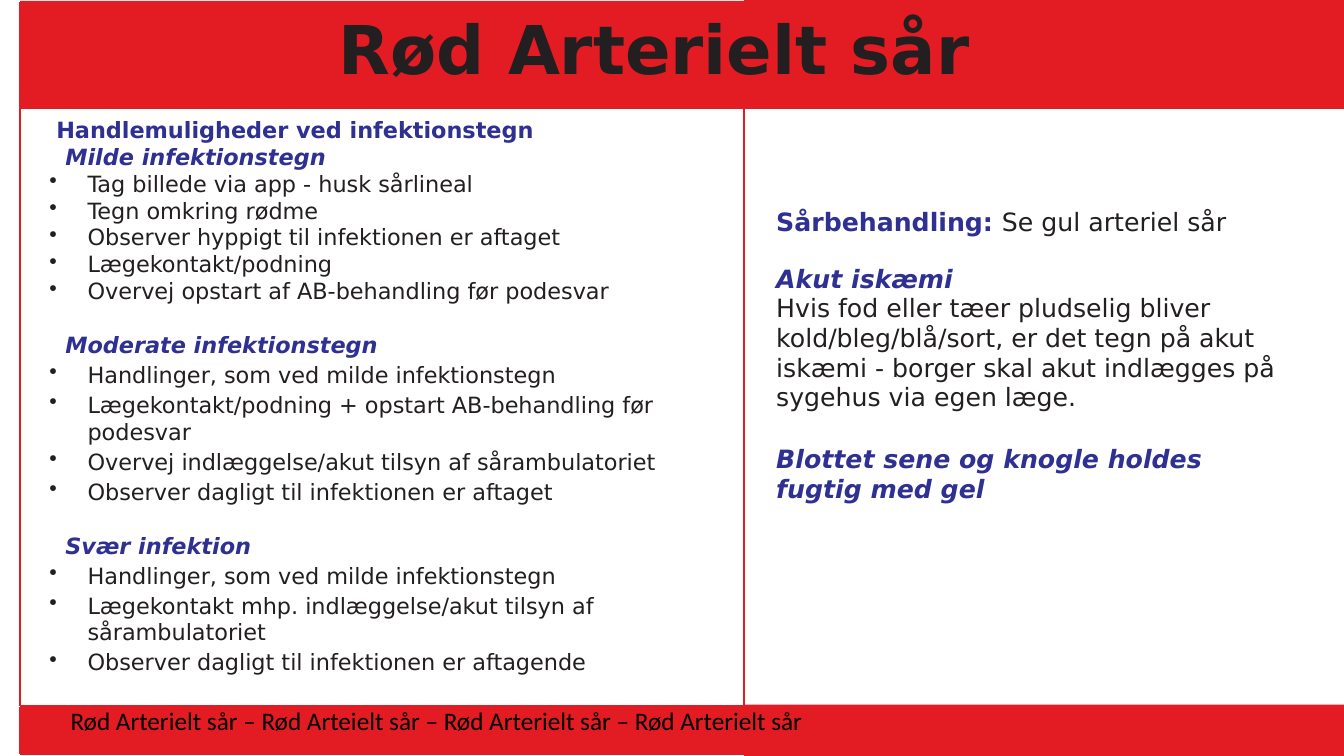
from lxml import etree
from pptx import Presentation
from pptx.dml.color import RGBColor
from pptx.enum.shapes import MSO_CONNECTOR as Connector, MSO_SHAPE as Shape
from pptx.enum.text import MSO_ANCHOR as Anchor, MSO_AUTO_SIZE as AutoSize, PP_ALIGN as Align
from pptx.oxml.ns import qn
from pptx.util import Inches, Pt

RED, BLUE, INK, BLACK = "E31B22", "2E3092", "231F20", "000000"
LEFT, MIDDLE, RIGHT = 0.2, 7.38, 13.33


def color(value):
    return RGBColor.from_string(value)


def write(para, text, size=16, font="DejaVu Sans", fill=INK, bold=False, italic=False):
    span = para.add_run()
    span.text = text
    span.font.size = Pt(size)
    span.font.name = font
    span.font.color.rgb = color(fill)
    span.font.bold = bold
    span.font.italic = italic


class Board:
    def __init__(self, slide, accent):
        self.slide = slide
        self.accent = accent

    def band(self, left, top, width, height):
        shape = self.slide.shapes.add_shape(
            Shape.RECTANGLE, Inches(left), Inches(top), Inches(width), Inches(height))
        shape.shadow.inherit = False
        shape.fill.solid()
        shape.fill.fore_color.rgb = color(self.accent)
        shape.line.fill.background()
        return shape

    def rule(self, x1, y1, x2, y2):
        line = self.slide.shapes.add_connector(
            Connector.STRAIGHT, Inches(x1), Inches(y1), Inches(x2), Inches(y2))
        line.line.color.rgb = color(self.accent)
        line.line.width = Pt(1)
        etree.SubElement(line._element.spPr, qn("a:effectLst"))

    def textbox(self, left, top, width, height):
        box = self.slide.shapes.add_textbox(
            Inches(left), Inches(top), Inches(width), Inches(height))
        box.text_frame.word_wrap = True
        box.text_frame.auto_size = AutoSize.SHAPE_TO_FIT_TEXT
        return box.text_frame

    def paragraph(self, frame, before=0, spacing=None, indent=0, hanging=0):
        first = frame.paragraphs[0]
        para = frame.add_paragraph() if first.runs else first
        para.space_before = Pt(before)
        if spacing:
            para.line_spacing = spacing
        props = para._p.get_or_add_pPr()
        props.set("marL", str(Inches(indent)))
        props.set("indent", str(-Inches(hanging)))
        return para

    def bullet(self, frame, text, before, spacing):
        para = self.paragraph(frame, before, spacing, 0.38, 0.38)
        props = para._p.get_or_add_pPr()
        tint = etree.SubElement(props, qn("a:buClr"))
        etree.SubElement(tint, qn("a:srgbClr"), val=INK)
        etree.SubElement(props, qn("a:buChar"), char="•")
        write(para, text)


SECTIONS = [
    ("Milde infektionstegn", 0, Pt(19.4), 0, Pt(19.2), [
        "Tag billede via app - husk sårlineal",
        "Tegn omkring rødme",
        "Observer hyppigt til infektionen er aftaget",
        "Lægekontakt/podning",
        "Overvej opstart af AB-behandling før podesvar"]),
    ("Moderate infektionstegn", 19.3, None, 2.2, None, [
        "Handlinger, som ved milde infektionstegn",
        "Lægekontakt/podning + opstart AB-behandling før podesvar",
        "Overvej indlæggelse/akut tilsyn af sårambulatoriet",
        "Observer dagligt til infektionen er aftaget"]),
    ("Svær infektion", 19.3, None, 2.2, None, [
        "Handlinger, som ved milde infektionstegn",
        "Lægekontakt mhp. indlæggelse/akut tilsyn af sårambulatoriet",
        "Observer dagligt til infektionen er aftagende"]),
]


def draw_frame(board):
    board.band(LEFT, 0.01, RIGHT - LEFT, 1.06)
    footer = board.band(LEFT, 7, RIGHT - LEFT, 0.49).text_frame
    footer.margin_left = Inches(0.5)
    footer.margin_top = footer.margin_right = footer.margin_bottom = 0
    footer.vertical_anchor = Anchor.TOP
    para = board.paragraph(footer)
    para.alignment = Align.LEFT
    write(para, "Rød Arterielt sår – Rød Arteielt sår – Rød Arterielt sår – Rød Arterielt sår",
          size=18, font="Calibri", fill=BLACK)
    for top in (0, 1.06, 6.99, 7.48):
        board.band(MIDDLE, top, RIGHT - MIDDLE, 0.02)
    for y in (1.07, 7):
        board.rule(0.19, y, MIDDLE, y)
    for x, top, bottom in ((LEFT, 0.02, 1.06), (LEFT, 1.08, 6.99),
                           (LEFT, 7.01, 7.48), (MIDDLE, 1.08, 6.99)):
        board.rule(x, top, x, bottom)


def draw_actions(board):
    frame = board.textbox(0.39, 1.1, 6.78, 5.75)
    write(board.paragraph(frame, 0.2, indent=0.07),
          "Handlemuligheder ved infektionstegn", fill=BLUE, bold=True)
    for heading, gap, spacing, before, item_spacing, items in SECTIONS:
        write(board.paragraph(frame, gap, spacing, 0.16), heading,
              fill=BLUE, bold=True, italic=True)
        for item in items:
            board.bullet(frame, item, before, item_spacing)


def draw_treatment(board):
    frame = board.textbox(7.44, 2, 5.38, 3.07)
    para = board.paragraph(frame, indent=0.16)
    write(para, "Sårbehandling: ", size=18, fill=BLUE, bold=True)
    write(para, "Se gul arteriel sår", size=18)
    write(board.paragraph(frame, 19.3, indent=0.16), "Akut iskæmi",
          size=18, fill=BLUE, bold=True, italic=True)
    write(board.paragraph(frame, 0.1, 0.98, 0.16),
          "Hvis fod eller tæer pludselig bliver kold/bleg/blå/sort, er det tegn på akut "
          "iskæmi - borger skal akut indlægges på sygehus via egen læge.", size=18)
    write(board.paragraph(frame, 22, indent=0.16),
          "Blottet sene og knogle holdes fugtig med gel",
          size=18, fill=BLUE, bold=True, italic=True)


def draw_title(board):
    para = board.paragraph(board.textbox(3.12, 0.02, 6.74, 0.91), 2.5)
    para.alignment = Align.CENTER
    write(para, "Rød Arterielt sår", size=48, bold=True)


def main():
    deck = Presentation()
    deck.slide_width, deck.slide_height = Inches(13.33), Inches(7.5)
    page = deck.slides.add_slide(deck.slide_layouts[6])
    board = Board(page, RED)
    draw_frame(board)
    draw_actions(board)
    draw_treatment(board)
    draw_title(board)
    deck.save("out.pptx")


if __name__ == "__main__":
    main()
